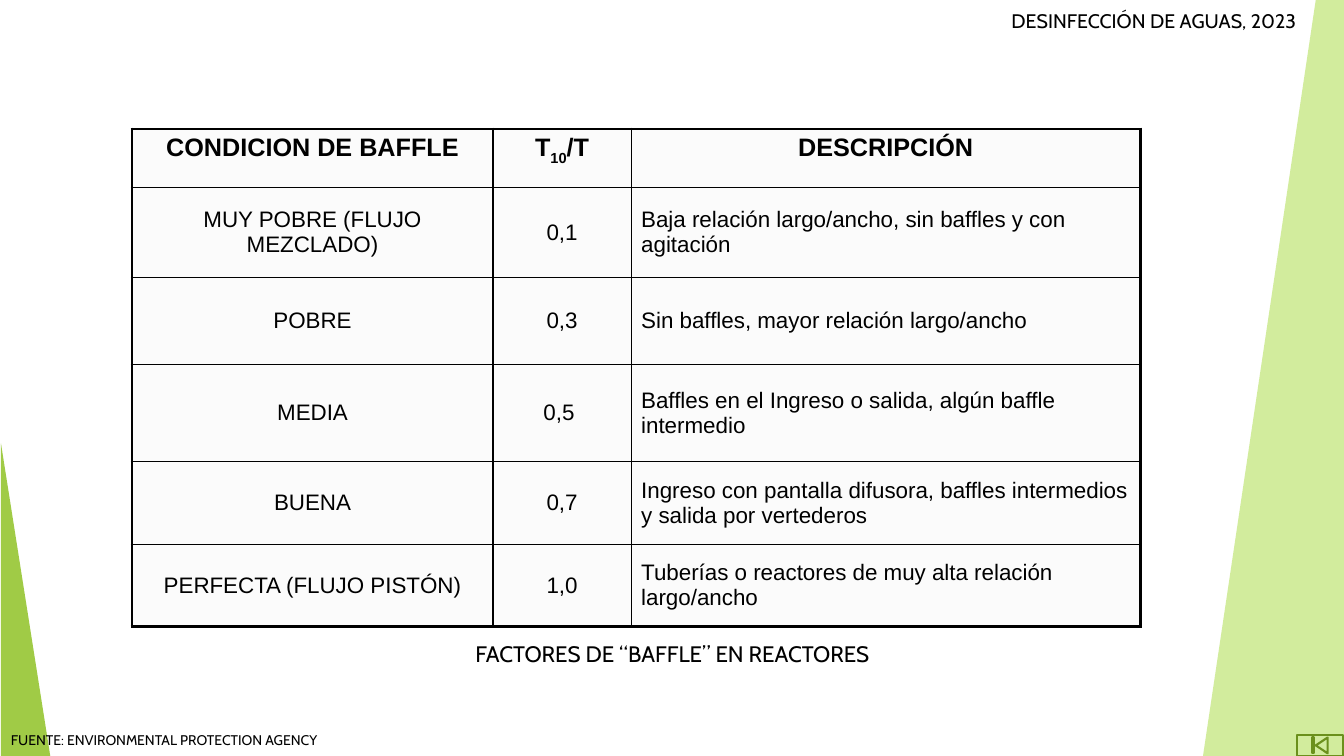
"""Build the slide on baffle factors in disinfection reactors."""
from dataclasses import dataclass

from lxml import etree
from pptx import Presentation
from pptx import util as u
from pptx.dml.color import RGBColor
from pptx.enum import shapes, text
from pptx.oxml.ns import qn

EMU_PER_PX = 9144
COLORS = {"black": "000000", "cell": "FBFBFB", "pale": "C0E474", "green": "90C226", "button": "6B901C"}
COLUMNS = [358, 137, 505]
ROWS = [58, 89, 87, 96, 82, 82]
OUTER, INNER = 2.25, 1
CENTER, LEFT = text.PP_ALIGN.CENTER, text.PP_ALIGN.LEFT
SUBSCRIPT = "-25000"


@dataclass
class Box:
    left: int
    top: int
    width: int
    height: int

    def emu(self) -> list[int]:
        return [px(v) for v in (self.left, self.top, self.width, self.height)]


@dataclass
class Style:
    size: int
    font: str = "Cabin"
    align: text.PP_ALIGN = CENTER
    bold: bool = False


@dataclass
class Label:
    wording: str
    box: Box
    style: Style


@dataclass
class Condition:
    name: str
    ratio: str
    description: str


TABLE = Box(131, 128, sum(COLUMNS), sum(ROWS))
BAND = [(1305, 0), (1334, 0), (1334, 751), (1193, 751)]
TITLE = Label("FACTORES DE “BAFFLE” EN REACTORES", Box(1, 630, 1332, 48), Style(16))
LABELS = [
    Label("DESINFECCIÓN DE AGUAS, 2023", Box(977, 4, 335, 34), Style(14)),
    Label("FUENTE: ENVIRONMENTAL PROTECTION AGENCY", Box(1, 721, 465, 27), Style(10, align=LEFT)),
]
HEADERS = [["CONDICION DE BAFFLE"], ["T", "10", "/T"], ["DESCRIPCIÓN"]]
CONDITIONS = [
    Condition("MUY POBRE (FLUJO MEZCLADO)", "0,1", "Baja relación largo/ancho, sin baffles y con agitación"),
    Condition("POBRE", "0,3", "Sin baffles, mayor relación largo/ancho"),
    Condition("MEDIA", "0,5 ", "Baffles en el Ingreso o salida, algún baffle intermedio"),
    Condition("BUENA", "0,7", "Ingreso con pantalla difusora, baffles intermedios y salida por vertederos"),
    Condition("PERFECTA (FLUJO PISTÓN)", "1,0", "Tuberías o reactores de muy alta relación largo/ancho"),
]


def px(value: int) -> int:
    return u.Emu(value * EMU_PER_PX)


def rgb(name: str) -> RGBColor:
    return RGBColor.from_string(COLORS[name])


def write(frame, runs: list[str], style: Style) -> None:
    paragraph = frame.paragraphs[0]
    paragraph.alignment = style.align
    for wording in runs:
        run = paragraph.add_run()
        run.text = wording
        run.font.size = u.Pt(style.size)
        run.font.name = style.font
        run.font.bold = style.bold
        run.font.color.rgb = rgb("black")


def tint(shape, color: str, opacity: int) -> None:
    shape.shadow.inherit = False
    shape.line.fill.background()
    shape.fill.solid()
    shape.fill.fore_color.rgb = rgb(color)
    fill_color = shape.fill._xPr.find(qn("a:solidFill"))[0]
    etree.SubElement(fill_color, qn("a:alpha"), val=str(opacity * 1000))


def add_decoration(slide) -> None:
    builder = slide.shapes.build_freeform(*BAND[0], scale=EMU_PER_PX)
    builder.add_line_segments(BAND[1:], close=True)
    tint(builder.convert_to_shape(), "pale", 70)
    wedge = slide.shapes.add_shape(shapes.MSO_SHAPE.ISOSCELES_TRIANGLE, *Box(1, 440, 49, 311).emu())
    wedge.adjustments[0] = 0
    tint(wedge, "green", 85)
    button = slide.shapes.add_shape(shapes.MSO_SHAPE.ACTION_BUTTON_BEGINNING, *Box(1286, 729, 46, 21).emu())
    button.shadow.inherit = False
    button.fill.background()
    button.line.color.rgb = rgb("button")
    button.line.width = u.Pt(1.5)


def add_label(slide, label: Label) -> None:
    frame = slide.shapes.add_textbox(*label.box.emu()).text_frame
    frame.word_wrap = True
    write(frame, [label.wording], label.style)


def set_title(slide, label: Label) -> None:
    title = slide.shapes.title
    title.left, title.top, title.width, title.height = label.box.emu()
    title.text_frame.vertical_anchor = text.MSO_ANCHOR.TOP
    write(title.text_frame, [label.wording], label.style)


def set_borders(cell, row: int, column: int) -> None:
    edges = {
        "lnL": column == 0,
        "lnR": column == len(COLUMNS) - 1,
        "lnT": row == 0,
        "lnB": row == len(ROWS) - 1,
    }
    properties = cell._tc.get_or_add_tcPr()
    for edge, outside in edges.items():
        width = u.Pt(OUTER if outside else INNER)
        line = etree.SubElement(properties, qn(f"a:{edge}"), w=str(width))
        fill = etree.SubElement(line, qn("a:solidFill"))
        etree.SubElement(fill, qn("a:srgbClr"), val=COLORS["black"])


def add_baffle_table(slide) -> None:
    table = slide.shapes.add_table(len(ROWS), len(COLUMNS), *TABLE.emu()).table
    table.first_row = table.horz_banding = False
    for column, width in zip(table.columns, COLUMNS):
        column.width = px(width)
    for row, height in zip(table.rows, ROWS):
        row.height = px(height)
    body = [[[c.name], [c.ratio], [c.description]] for c in CONDITIONS]
    for row, contents in enumerate([HEADERS, *body]):
        for column, runs in enumerate(contents):
            cell = table.cell(row, column)
            heading = row == 0
            align = LEFT if column == 2 and not heading else CENTER
            write(cell.text_frame, runs, Style(18 if heading else 16, "Arial", align, heading))
            cell.vertical_anchor = text.MSO_ANCHOR.TOP if heading else text.MSO_ANCHOR.MIDDLE
            set_borders(cell, row, column)
            cell.fill.solid()
            cell.fill.fore_color.rgb = rgb("cell")
    subscript = table.cell(0, 1).text_frame.paragraphs[0].runs[1]
    subscript.font._element.set("baseline", SUBSCRIPT)


def main() -> None:
    presentation = Presentation()
    presentation.slide_width, presentation.slide_height = px(1333), px(750)
    slide = presentation.slides.add_slide(presentation.slide_layouts[5])
    add_decoration(slide)
    set_title(slide, TITLE)
    add_baffle_table(slide)
    for label in LABELS:
        add_label(slide, label)
    presentation.save("out.pptx")


if __name__ == "__main__":
    main()
